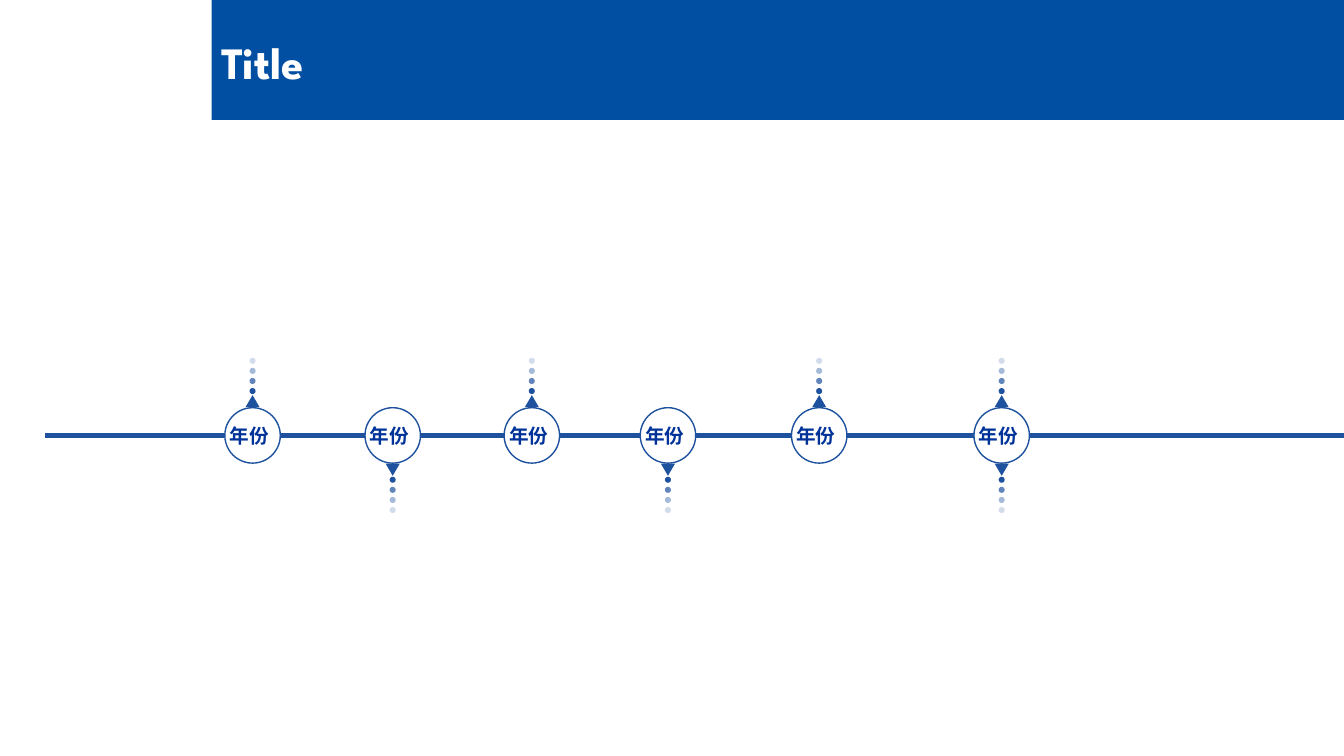
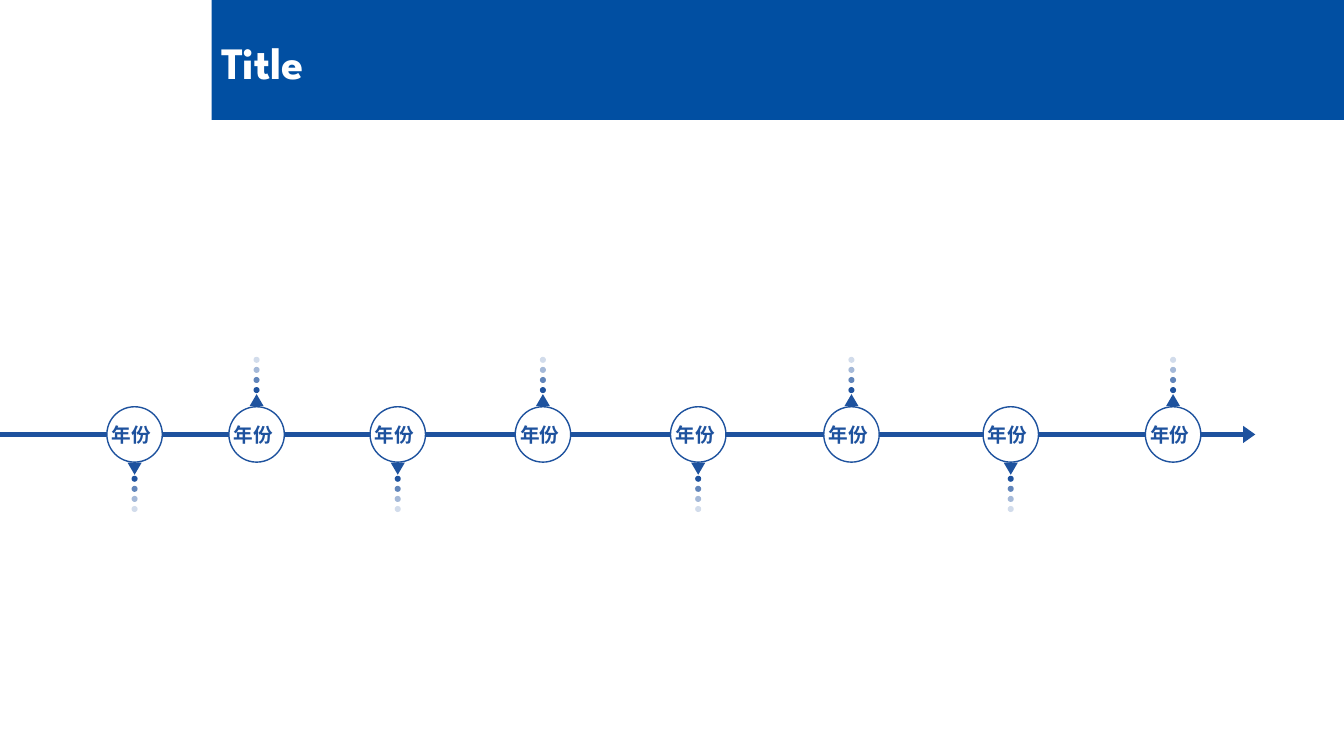
from lxml import etree
from pptx import Presentation
from pptx.dml.color import RGBColor
from pptx.enum import shapes, text
from pptx.oxml import ns
from pptx.util import Inches, Pt

WHITE = RGBColor(0xFF, 0xFF, 0xFF)
BAND_BLUE = RGBColor(0x01, 0x4F, 0xA2)
LINE_BLUE = RGBColor(0x1E, 0x52, 0x9E)
YEAR_BLUE = RGBColor(0x00, 0x33, 0x99)
TITLE_FONT, BODY_FONT = "League Spartan", "Calibri"

WIDTH, HEIGHT = 13.33, 7.5
BAND_LEFT, BAND_HEIGHT = 2.1, 1.19
CIRCLE, DOT = 0.55, 0.06
TIP_W, TIP_H = 0.14, 0.12
TIP_OFFSET, DOT_STEP = 0.34, 0.1
DOT_ALPHAS = (100, 70, 40, 20)
UP, DOWN = -1, 1

# Milestones: label, left edge of the circle, directions of its pointers
SLIDES = [
    dict(title="Title", axis=(0.45, WIDTH), y=4.32, arrow=False, label_color=YEAR_BLUE,
         milestones=[("年份", 2.23, [UP]), ("年份", 3.62, [DOWN]), ("年份", 5.0, [UP]),
                     ("年份", 6.35, [DOWN]), ("年份", 7.85, [UP]), ("年份", 9.66, [UP, DOWN])]),
    dict(title="Title", axis=(0, 12.34), y=4.31, arrow=True, label_color=LINE_BLUE,
         milestones=[("年份", 1.06, [DOWN]), ("年份", 2.27, [UP]), ("年份", 3.67, [DOWN]),
                     ("年份", 5.11, [UP]), ("年份", 6.65, [DOWN]), ("年份", 8.17, [UP]),
                     ("年份", 9.75, [DOWN]), ("年份", 11.36, [UP])]),
]


def add_centred(parent, kind, cx, cy, w, h, fill, alpha=100):
    """Add a borderless shape centred on (cx, cy); alpha is its opacity in percent."""
    sp = parent.shapes.add_shape(kind, Inches(cx - w / 2), Inches(cy - h / 2), Inches(w), Inches(h))
    sp.shadow.inherit = False
    sp.fill.solid()
    sp.fill.fore_color.rgb = fill
    sp.line.fill.background()
    if alpha < 100:
        color = sp._element.spPr.find(ns.qn("a:solidFill"))[0]
        etree.SubElement(color, ns.qn("a:alpha"), val=str(alpha * 1000))
    return sp


def add_run(p, content, font, size, color):
    r = p.add_run()
    r.text = content
    r.font.name, r.font.size, r.font.bold = font, Pt(size), True
    r.font.color.rgb = color


def add_title(s, content):
    band_width = WIDTH - BAND_LEFT
    band = add_centred(s, shapes.MSO_SHAPE.RECTANGLE, BAND_LEFT + band_width / 2,
                       BAND_HEIGHT / 2, band_width, BAND_HEIGHT, BAND_BLUE)
    title = s.shapes.title
    title._element.addprevious(band._element)
    title.left, title.top = Inches(BAND_LEFT), Inches(0.33)
    title.width, title.height = Inches(band_width), Inches(0.57)
    tf = title.text_frame
    tf.auto_size = text.MSO_AUTO_SIZE.NONE
    tf.vertical_anchor = text.MSO_ANCHOR.MIDDLE
    p = tf.paragraphs[0]
    p.alignment = text.PP_ALIGN.LEFT
    pPr = p._p.get_or_add_pPr()
    pPr.set("marL", str(Inches(0.39)))
    pPr.set("indent", str(-Inches(0.39)))
    add_run(p, content, TITLE_FONT, 32, WHITE)


def add_axis(s, start, end, y, arrow):
    line = s.shapes.add_connector(shapes.MSO_CONNECTOR.STRAIGHT,
                                  Inches(start), Inches(y), Inches(end), Inches(y))
    line.line.color.rgb = LINE_BLUE
    line.line.width = Pt(3)
    etree.SubElement(line._element.spPr, ns.qn("a:effectLst"))
    if arrow:
        head = add_centred(s, shapes.MSO_SHAPE.ISOSCELES_TRIANGLE, end + 0.05, y,
                           0.17, 0.12, LINE_BLUE)
        head.rotation = 90


def add_milestone(s, label, left, y, color):
    grp = s.shapes.add_group_shape()
    circle = add_centred(grp, shapes.MSO_SHAPE.OVAL, left + CIRCLE / 2, y, CIRCLE, CIRCLE, WHITE)
    circle.line.color.rgb = LINE_BLUE
    circle.line.width = Pt(1)
    box = grp.shapes.add_textbox(Inches(left - 0.05), Inches(y - 0.16), Inches(0.59), Inches(0.34))
    tf = box.text_frame
    tf.word_wrap = False
    tf.auto_size = text.MSO_AUTO_SIZE.SHAPE_TO_FIT_TEXT
    add_run(tf.paragraphs[0], label, BODY_FONT, 14, color)


def add_pointer(s, cx, y, direction):
    """Add a triangle on the circle's rim and a trail of fading dots beyond it."""
    grp = s.shapes.add_group_shape()
    tip_y = y + direction * TIP_OFFSET
    for step, alpha in enumerate(DOT_ALPHAS, 1):
        add_centred(grp, shapes.MSO_SHAPE.OVAL, cx, tip_y + direction * step * DOT_STEP,
                    DOT, DOT, LINE_BLUE, alpha)
    tip = add_centred(grp, shapes.MSO_SHAPE.ISOSCELES_TRIANGLE, cx, tip_y, TIP_W, TIP_H, LINE_BLUE)
    tip.rotation = 180 if direction == DOWN else 0


def main():
    prs = Presentation()
    prs.slide_width, prs.slide_height = Inches(WIDTH), Inches(HEIGHT)
    title_only = prs.slide_layouts.get_by_name("Title Only")
    for spec in SLIDES:
        s = prs.slides.add_slide(title_only)
        y = spec["y"]
        add_title(s, spec["title"])
        add_axis(s, *spec["axis"], y, spec["arrow"])
        for label, left, _ in spec["milestones"]:
            add_milestone(s, label, left, y, spec["label_color"])
        for _, left, directions in spec["milestones"]:
            for direction in directions:
                add_pointer(s, left + CIRCLE / 2, y, direction)
    prs.save("out.pptx")


if __name__ == "__main__":
    main()
